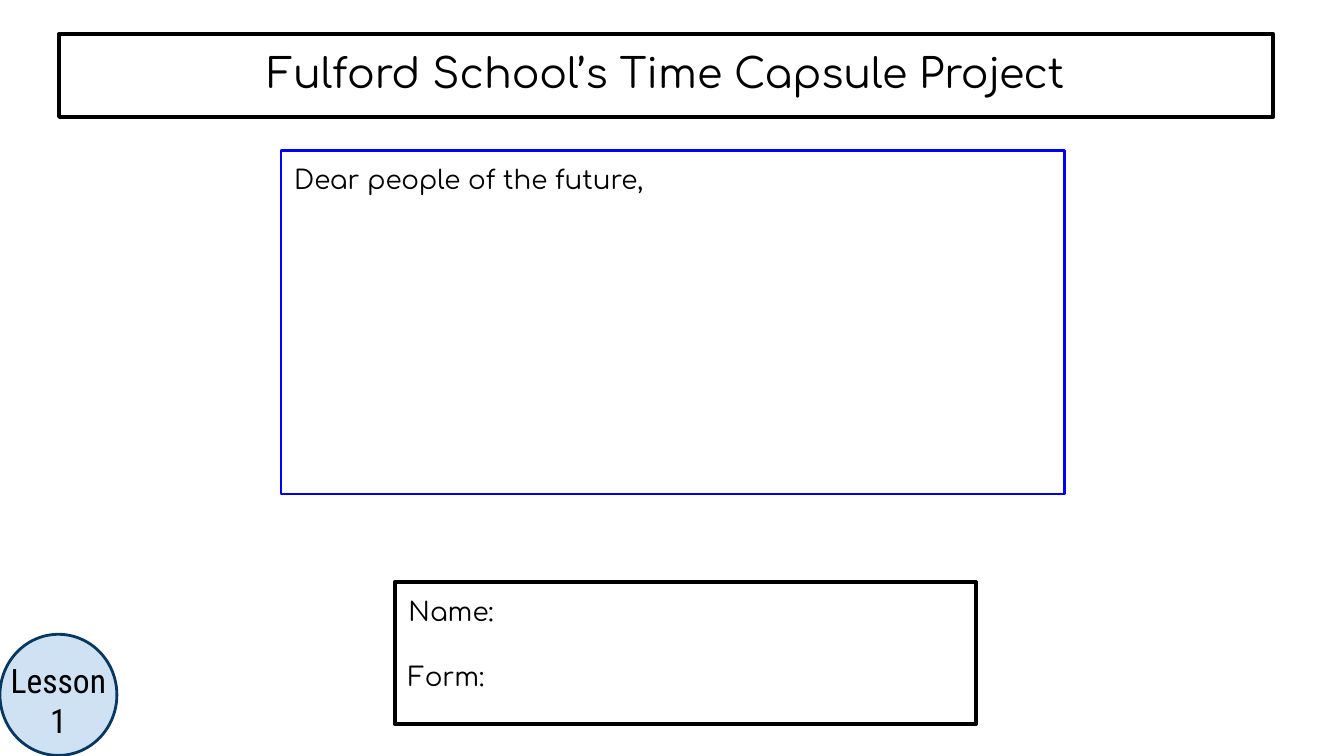
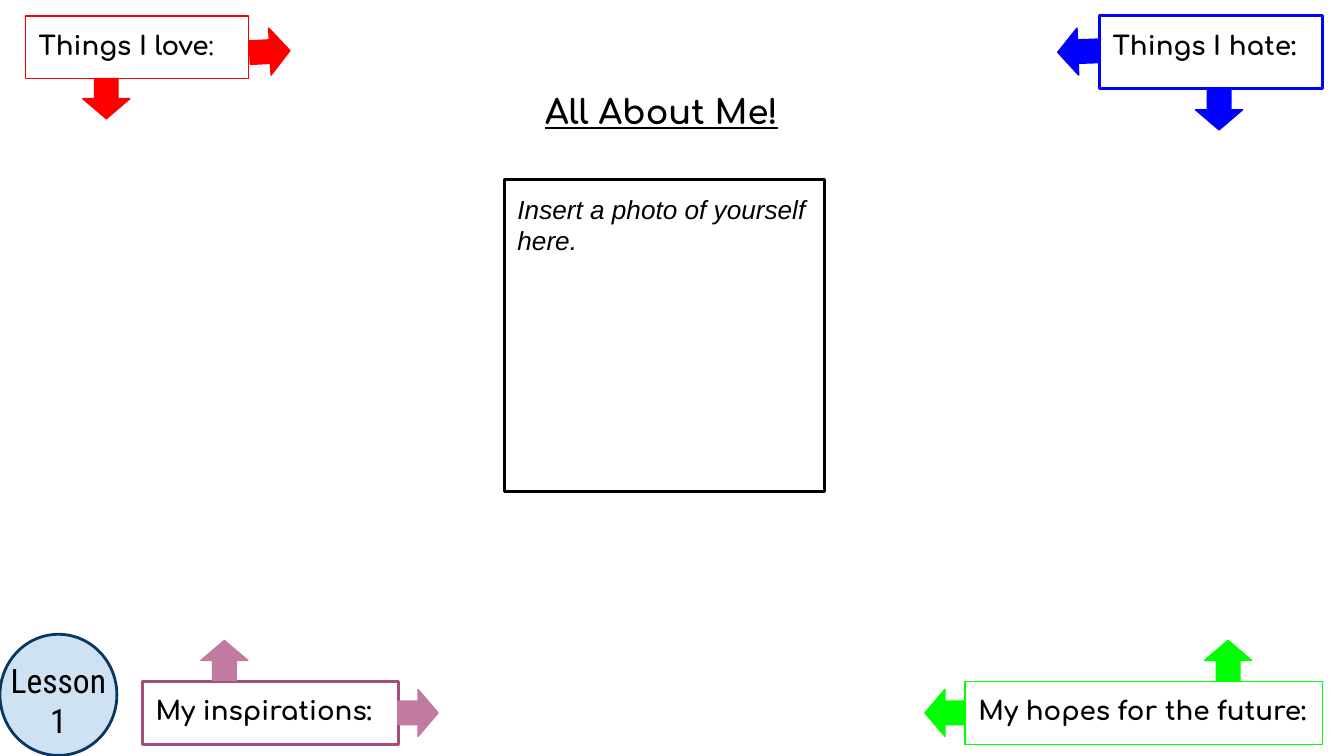
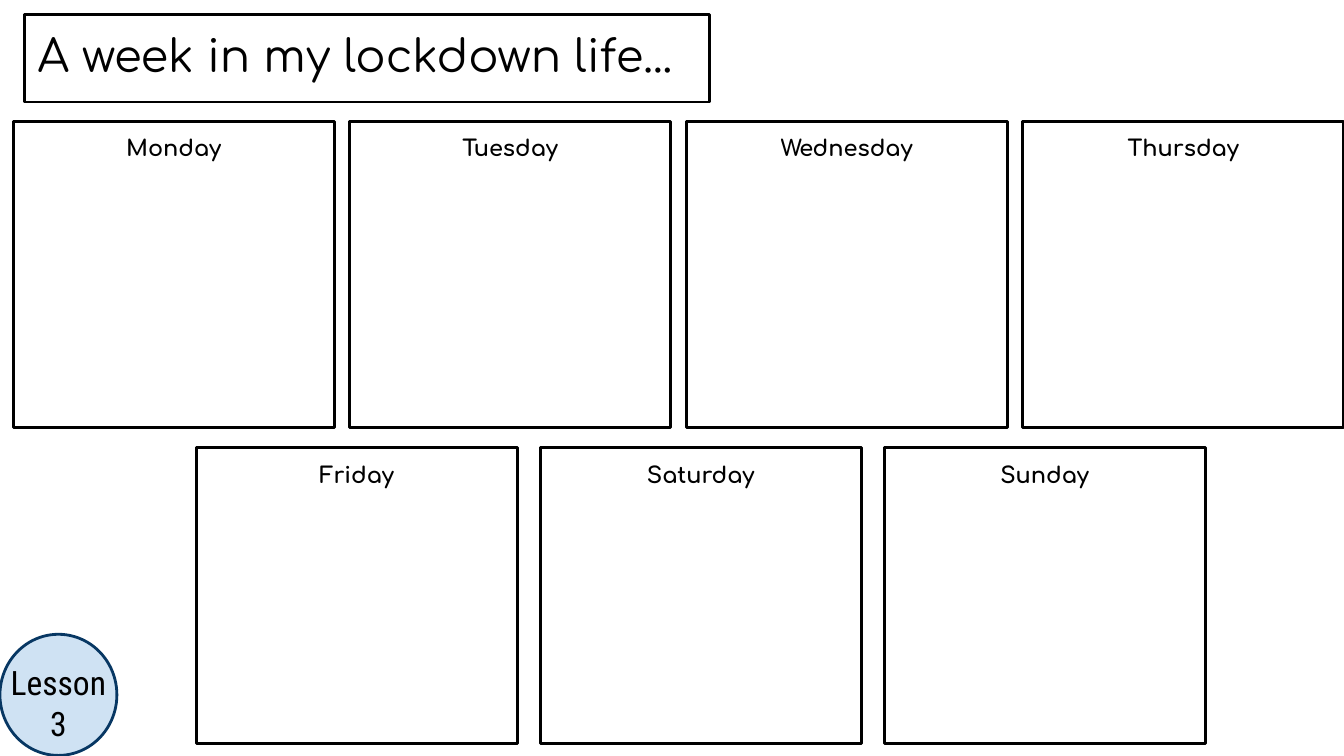
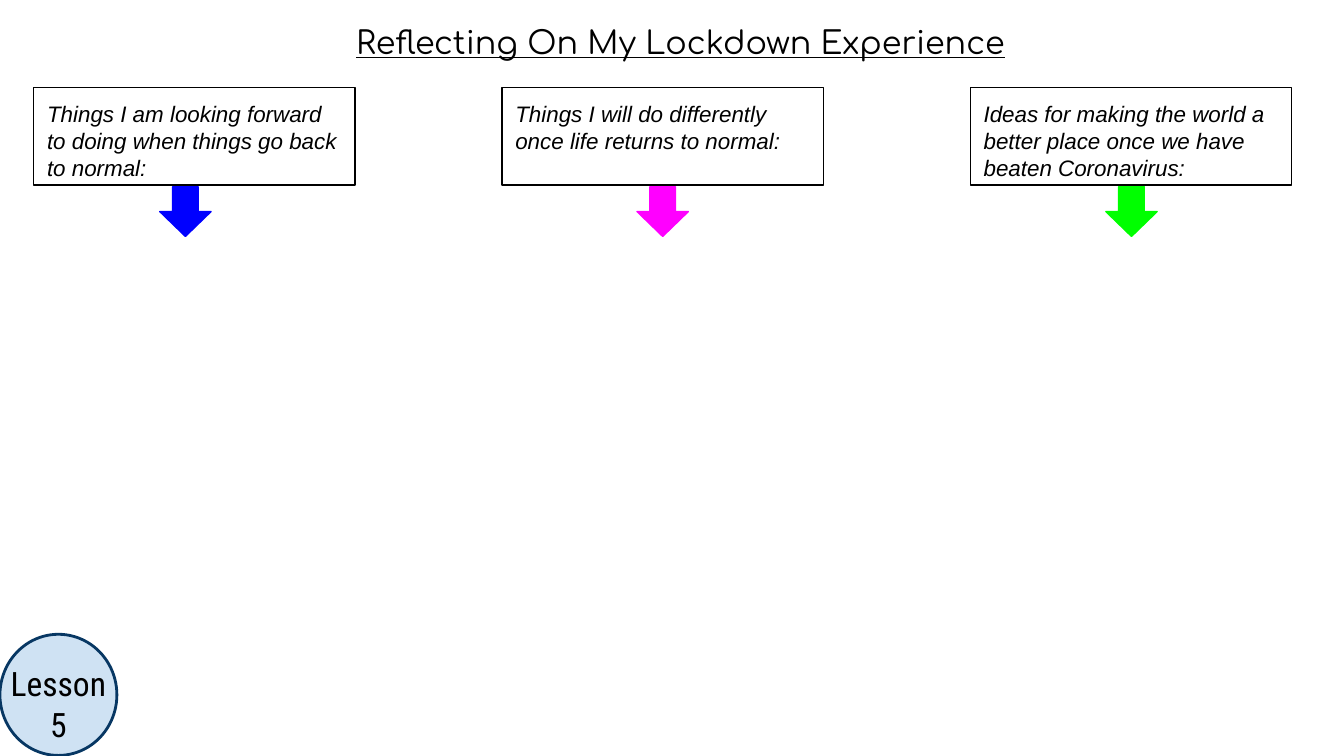
from dataclasses import dataclass
from typing import Optional

from pptx import Presentation
from pptx.dml.color import RGBColor
from pptx.enum.shapes import MSO_SHAPE as Preset
from pptx.enum.text import MSO_ANCHOR as Anchor, PP_ALIGN as Align
from pptx.shapes.autoshape import Shape
from pptx.slide import Slide
from pptx.util import Cm, Pt

BLACK = RGBColor(0x00, 0x00, 0x00)
RED = RGBColor(0xFF, 0x00, 0x00)
BLUE = RGBColor(0x00, 0x00, 0xFF)
GREEN = RGBColor(0x00, 0xFF, 0x00)
MAGENTA = RGBColor(0xFF, 0x00, 0xFF)
PLUM = RGBColor(0xA6, 0x4D, 0x79)
PINK = RGBColor(0xC2, 0x7B, 0xA0)
PALE_BLUE = RGBColor(0xCF, 0xE2, 0xF3)
NAVY = RGBColor(0x07, 0x37, 0x63)

ROUNDED_FONT = "Comfortaa"
PROMPT_FONT = "Arial"
BADGE_FONT = "Roboto Condensed"
INSET = Cm(0.25)


@dataclass(frozen=True)
class Box:
    """A position and size in centimetres."""
    left: float
    top: float
    width: float
    height: float

    def lengths(self) -> tuple:
        return Cm(self.left), Cm(self.top), Cm(self.width), Cm(self.height)


@dataclass(frozen=True)
class Pointer:
    left: float
    top: float
    rotation: float


@dataclass(frozen=True)
class Topic:
    label: str
    box: Box
    line_color: RGBColor
    line_width: float
    arrow_color: RGBColor
    pointers: tuple[Pointer, ...]
    plain_ending: str = ""


@dataclass(frozen=True)
class Reflection:
    prompt: str
    arrow_left: float
    arrow_color: RGBColor


BADGE = Box(0, 11.99, 2.21, 2.29)

TOPICS = (
    Topic("Things I love", Box(0.48, 0.3, 4.22, 1.19), RED, 0.75, RED,
          (Pointer(1.63, 1.42, 270), Pointer(4.72, 0.53, 177.1)), plain_ending=":"),
    Topic("Things I hate:", Box(20.78, 0.3, 4.22, 1.37), BLUE, 1.5, BLUE,
          (Pointer(19.99, 0.53, 358), Pointer(22.66, 1.63, 270))),
    Topic("My inspirations:", Box(2.69, 12.88, 4.85, 1.19), PLUM, 1.5, PINK,
          (Pointer(3.86, 12.04, 90), Pointer(7.52, 13.03, 180))),
    Topic("My hopes for the future:", Box(18.24, 12.88, 6.76, 1.19), GREEN, 0.75, GREEN,
          (Pointer(22.83, 12.04, 90), Pointer(17.48, 13.03, 359.9))),
)

REFLECTIONS = (
    Reflection("Things I am looking forward to doing when things go back to normal:",
               3.02, BLUE),
    Reflection("Things I will do differently once life returns to normal:",
               12.04, MAGENTA),
    Reflection("Ideas for making the world a better place once we have beaten Coronavirus:",
               20.9, GREEN),
)


def write_text(shape: Shape, *lines: str, size: float, font: str = ROUNDED_FONT,
               bold: bool = False, italic: bool = False, underline: bool = False,
               align: Align = Align.LEFT, gap: float = 0, plain_ending: str = "") -> None:
    """Write one paragraph per line; plain_ending follows the last line without bold."""
    frame = shape.text_frame
    frame.word_wrap = True
    frame.vertical_anchor = Anchor.TOP
    frame.margin_left = frame.margin_right = INSET
    frame.margin_top = frame.margin_bottom = INSET
    for index, line in enumerate(lines):
        paragraph = frame.add_paragraph() if index else frame.paragraphs[0]
        paragraph.alignment = align
        paragraph.space_before = Pt(gap if index else 0)
        pieces = [(line, bold)]
        if plain_ending and index == len(lines) - 1:
            pieces.append((plain_ending, False))
        for text, is_bold in pieces:
            run = paragraph.add_run()
            run.text = text
            run.font.name = font
            run.font.size = Pt(size)
            run.font.bold = is_bold
            run.font.italic = italic
            run.font.underline = underline
            run.font.color.rgb = BLACK


def add_preset(slide: Slide, preset: Preset, box: Box, line_color: RGBColor,
               line_width: float, fill_color: Optional[RGBColor] = None) -> Shape:
    shape = slide.shapes.add_shape(preset, *box.lengths())
    shape.shadow.inherit = False
    shape.line.color.rgb = line_color
    shape.line.width = Pt(line_width)
    if fill_color is None:
        shape.fill.background()
    else:
        shape.fill.solid()
        shape.fill.fore_color.rgb = fill_color
    return shape


def add_frame(slide: Slide, box: Box, *lines: str, line_color: RGBColor = BLACK,
              line_width: float = 1.5, **text_format) -> None:
    frame = add_preset(slide, Preset.RECTANGLE, box, line_color, line_width)
    write_text(frame, *lines, **text_format)


def add_label(slide: Slide, box: Box, *lines: str, **text_format) -> None:
    label = slide.shapes.add_textbox(*box.lengths())
    write_text(label, *lines, align=Align.CENTER, **text_format)


def add_arrow(slide: Slide, preset: Preset, box: Box, color: RGBColor,
              rotation: float = 0) -> None:
    arrow = add_preset(slide, preset, box, color, 0.75, color)
    arrow.rotation = rotation


def add_lesson_badge(slide: Slide, lesson: int, label_top: float = 12.22) -> None:
    add_preset(slide, Preset.OVAL, BADGE, NAVY, 1.5, PALE_BLUE)
    add_label(slide, Box(-0.51, label_top, 3.23, 2.49), "Lesson", str(lesson),
              size=18, font=BADGE_FONT)


def build_letter(slide: Slide) -> None:
    add_frame(slide, Box(1.12, 0.64, 22.94, 1.57), "Fulford School’s Time Capsule Project",
              line_width=2.25, size=22, align=Align.CENTER)
    add_frame(slide, Box(7.47, 11, 10.97, 2.69), "Name:", "Form:",
              line_width=2.25, size=14, gap=18)
    add_frame(slide, Box(5.31, 2.84, 14.81, 6.5), "Dear people of the future,",
              line_color=BLUE, size=14)
    add_lesson_badge(slide, 1)


def build_about_me(slide: Slide) -> None:
    add_frame(slide, Box(9.53, 3.4, 6.05, 5.89), "Insert a photo of yourself here.",
              size=14, font=PROMPT_FONT, italic=True)
    for topic in TOPICS:
        add_frame(slide, topic.box, topic.label, line_color=topic.line_color,
                  line_width=topic.line_width, size=14, bold=True,
                  plain_ending=topic.plain_ending)
    for topic in TOPICS:
        for pointer in topic.pointers:
            add_arrow(slide, Preset.LEFT_ARROW, Box(pointer.left, pointer.top, 0.76, 0.89),
                      topic.arrow_color, pointer.rotation)
    add_label(slide, Box(9.75, 1.47, 5.51, 1.19), "All About Me!",
              size=18, bold=True, underline=True)
    add_lesson_badge(slide, 1)


def add_day_row(slide: Slide, days: tuple[str, ...], first: Box, pitch: float) -> None:
    for column, day in enumerate(days):
        box = Box(first.left + column * pitch, first.top, first.width, first.height)
        add_frame(slide, box, day, size=12, bold=True, align=Align.CENTER)


def build_week(slide: Slide) -> None:
    add_frame(slide, Box(0.46, 0.28, 12.95, 1.65), "A week in my lockdown life...", size=24)
    add_day_row(slide, ("Monday", "Tuesday", "Wednesday", "Thursday"),
                Box(0.25, 2.29, 6.07, 5.79), pitch=6.36)
    add_day_row(slide, ("Friday", "Saturday", "Sunday"),
                Box(3.71, 8.46, 6.07, 5.59), pitch=6.5)
    add_lesson_badge(slide, 3, label_top=12.27)


def build_reflections(slide: Slide) -> None:
    add_lesson_badge(slide, 5, label_top=12.29)
    add_label(slide, Box(6.35, 0.18, 13.03, 1.37), "Reflecting On My Lockdown Experience",
              size=17, underline=True)
    for column, reflection in enumerate(REFLECTIONS):
        add_frame(slide, Box(0.64 + column * 8.85, 1.65, 6.07, 1.85), reflection.prompt,
                  line_width=0.75, size=12, font=PROMPT_FONT, italic=True)
    for reflection in REFLECTIONS:
        add_arrow(slide, Preset.DOWN_ARROW, Box(reflection.arrow_left, 3.53, 0.97, 0.94),
                  reflection.arrow_color)


def main() -> None:
    presentation = Presentation()
    presentation.slide_width = Cm(25.4)
    presentation.slide_height = Cm(14.29)
    blank_layout = presentation.slide_layouts[6]
    for build in (build_letter, build_about_me, build_week, build_reflections):
        build(presentation.slides.add_slide(blank_layout))
    presentation.save("out.pptx")


if __name__ == "__main__":
    main()
